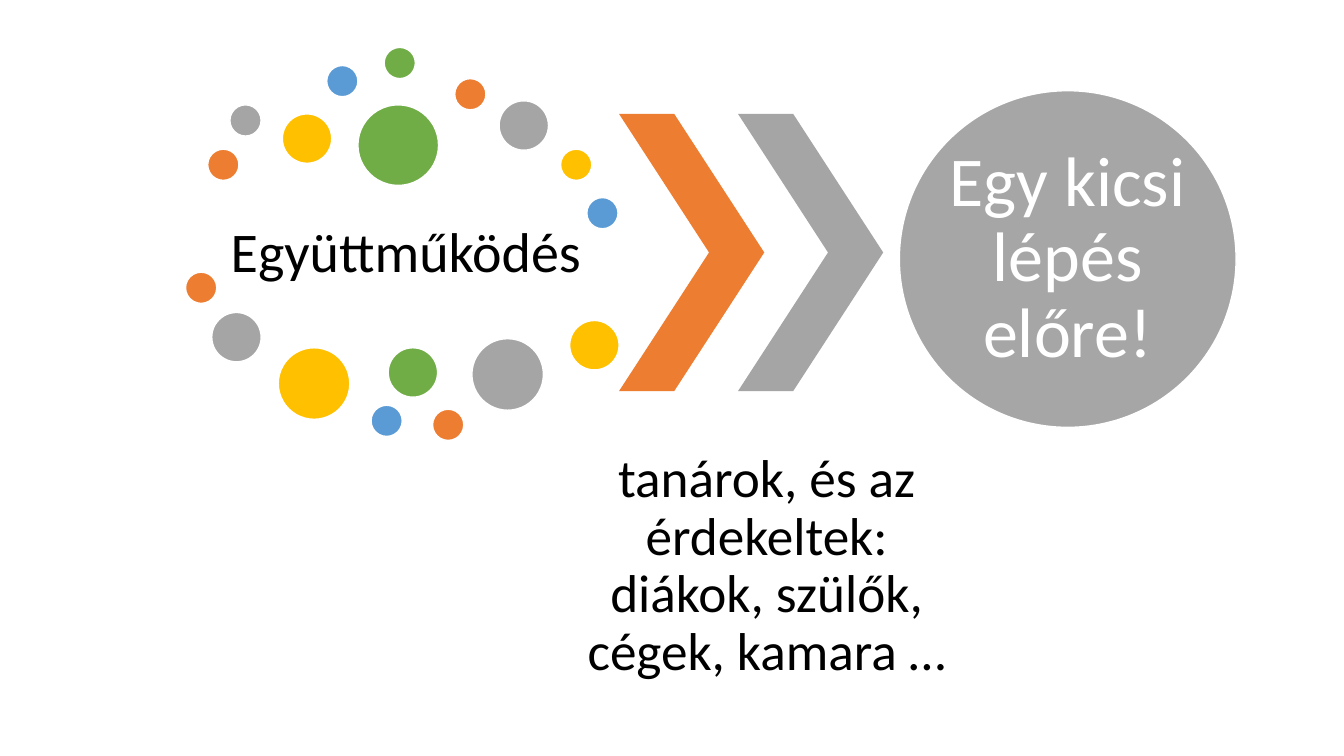
from dataclasses import dataclass
from typing import NamedTuple

from pptx import Presentation
from pptx.dml.color import RGBColor
from pptx.enum import shapes, text
from pptx.shapes.autoshape import Shape
from pptx.slide import Slide
from pptx.util import Inches, Pt


@dataclass(frozen=True)
class Theme:
    font: str = "Calibri"
    orange: str = "ED7D31"
    gray: str = "A5A5A5"
    yellow: str = "FFC000"
    blue: str = "5B9BD5"
    green: str = "70AD47"
    goal_gray: str = "A6A6A6"
    white: str = "FFFFFF"
    black: str = "000000"
    topic_size: int = 40
    partners_size: int = 38
    goal_size: int = 50


class Box(NamedTuple):
    left: float
    top: float
    width: float
    height: float


class Dot(NamedTuple):
    left: float
    top: float
    diameter: float
    color: str


THEME = Theme()
SMALL, MEDIUM, LARGE, LARGEST = 0.31, 0.49, 0.71, 0.8

DOTS = [
    # Arc above the topic
    Dot(2.06, 1.48, SMALL, THEME.orange),
    Dot(2.28, 1.04, SMALL, THEME.gray),
    Dot(2.8, 1.13, MEDIUM, THEME.yellow),
    Dot(3.24, 0.65, SMALL, THEME.blue),
    Dot(3.81, 0.47, SMALL, THEME.green),
    Dot(4.51, 0.78, SMALL, THEME.orange),
    Dot(4.95, 1, MEDIUM, THEME.gray),
    Dot(5.56, 1.48, SMALL, THEME.yellow),
    Dot(5.82, 1.96, SMALL, THEME.blue),
    Dot(3.55, 1.04, LARGEST, THEME.green),
    # Arc below the topic
    Dot(1.84, 2.7, SMALL, THEME.orange),
    Dot(2.1, 3.1, MEDIUM, THEME.gray),
    Dot(2.76, 3.45, LARGE, THEME.yellow),
    Dot(3.68, 4.02, SMALL, THEME.blue),
    Dot(3.85, 3.45, MEDIUM, THEME.green),
    Dot(4.29, 4.06, SMALL, THEME.orange),
    Dot(4.68, 3.36, LARGE, THEME.gray),
    Dot(5.65, 3.18, MEDIUM, THEME.yellow),
]


def write(holder: Shape, words: str, size: int, color: str, inset: float) -> None:
    frame = holder.text_frame
    frame.word_wrap = True
    frame.vertical_anchor = text.MSO_ANCHOR.MIDDLE
    frame.margin_left = frame.margin_right = Inches(inset)
    frame.margin_top = frame.margin_bottom = Inches(inset)
    frame.text = words
    paragraph = frame.paragraphs[0]
    paragraph.alignment = text.PP_ALIGN.CENTER
    paragraph.line_spacing = 0.9
    font = paragraph.runs[0].font
    font.name = THEME.font
    font.size = Pt(size)
    font.color.rgb = RGBColor.from_string(color)


def add_label(slide: Slide, box: Box, words: str, size: int, inset: float) -> None:
    label = slide.shapes.add_textbox(*map(Inches, box))
    write(label, words, size, THEME.black, inset)


def add_filled(slide: Slide, kind: shapes.MSO_SHAPE, box: Box, color: str) -> Shape:
    figure = slide.shapes.add_shape(kind, *map(Inches, box))
    figure.shadow.inherit = False
    figure.fill.solid()
    figure.fill.fore_color.rgb = RGBColor.from_string(color)
    figure.line.fill.background()
    return figure


def add_circle(slide: Slide, dot: Dot) -> Shape:
    box = Box(dot.left, dot.top, dot.diameter, dot.diameter)
    circle = add_filled(slide, shapes.MSO_SHAPE.OVAL, box, dot.color)
    circle.line.color.rgb = RGBColor.from_string(THEME.white)
    circle.line.width = Pt(1)
    return circle


def main() -> None:
    deck = Presentation()
    deck.slide_width, deck.slide_height = Inches(13.33), Inches(7.5)
    slide = deck.slides.add_slide(deck.slide_layouts.get_by_name("Blank"))

    # Topic and the people involved
    add_label(slide, Box(2.06, 1.87, 3.93, 1.3), "Együttműködés",
              THEME.topic_size, 0.06)
    add_label(slide, Box(5.64, 4.41, 3.93, 2.43),
              "tanárok, és az érdekeltek: diákok, szülők, cégek, kamara …",
              THEME.partners_size, 0.05)

    # Dots around the topic
    for dot in DOTS:
        add_circle(slide, dot)

    # Chevrons leading to the goal
    for step, color in enumerate((THEME.orange, THEME.gray)):
        chevron = add_filled(slide, shapes.MSO_SHAPE.CHEVRON,
                             Box(6.14 + 1.18 * step, 1.13, 1.44, 2.75), color)
        chevron.adjustments[0] = 0.62

    # Goal
    goal = add_circle(slide, Dot(8.92, 0.9, 3.34, THEME.goal_gray))
    write(goal, "Egy kicsi lépés előre!", THEME.goal_size, THEME.white, 0)

    deck.save("out.pptx")


if __name__ == "__main__":
    main()
